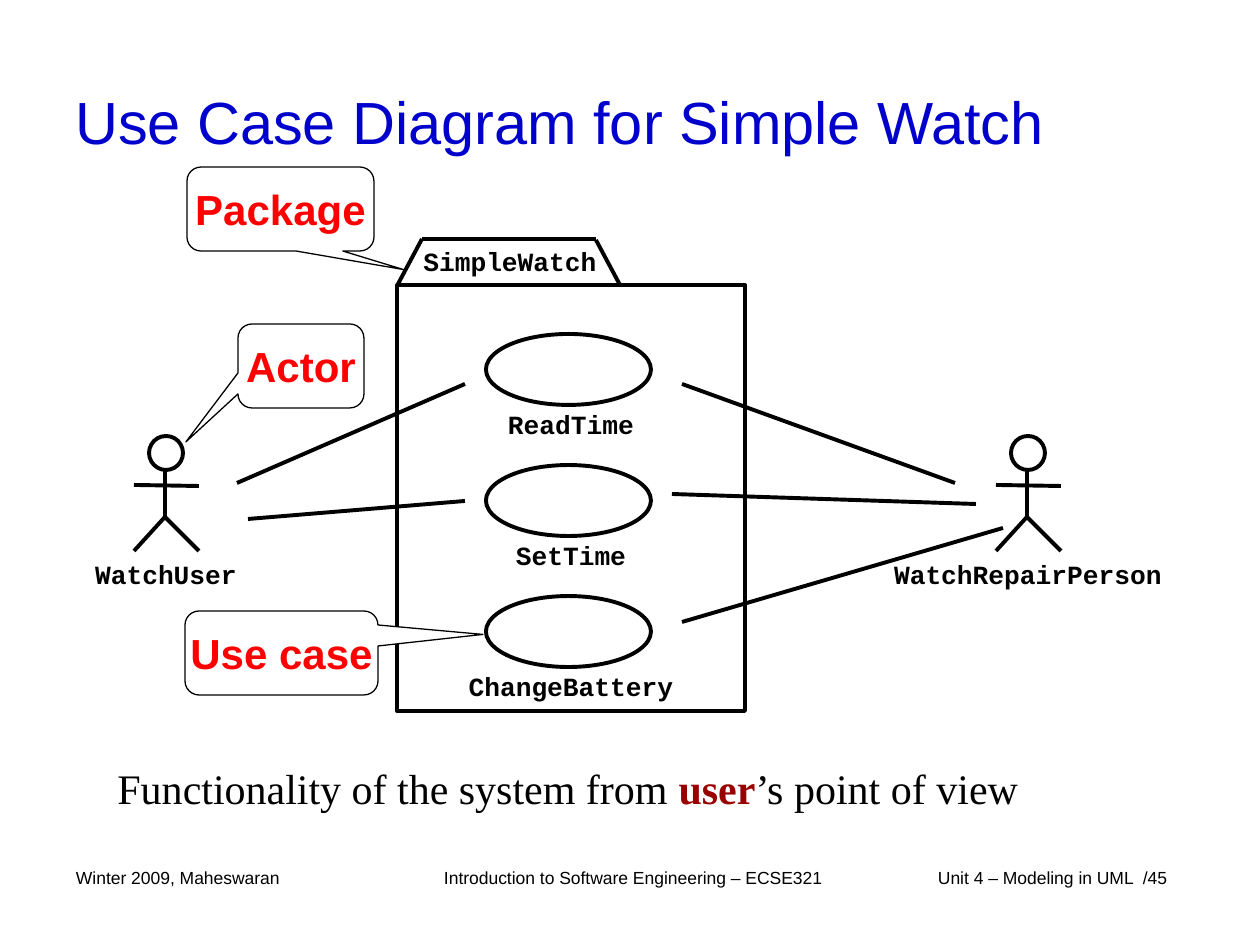
from lxml import etree
from pptx import Presentation
from pptx.dml.color import RGBColor
from pptx.enum import shapes, text
from pptx.oxml.ns import qn
from pptx.util import Emu, Pt

PX = 914400 / 126
ARIAL, MONO, SERIF = "Arial", "Courier New", "Times New Roman"
THEME = {
    "line": RGBColor(0, 0, 0),
    "paper": RGBColor(255, 255, 255),
    "thick": Pt(2.25),
    "thin": Pt(0.75),
    # style: font format and colour
    "title": ({"name": ARIAL, "size": Pt(34), "bold": False}, "0000CC"),
    "footer": ({"name": ARIAL, "size": Pt(10), "bold": False}, "000000"),
    "label": ({"name": MONO, "size": Pt(15), "bold": True}, "000000"),
    "callout": ({"name": ARIAL, "size": Pt(24), "bold": True}, "FF0000"),
    "body": ({"name": SERIF, "size": Pt(24), "bold": False}, "000000"),
    "strong": ({"name": SERIF, "size": Pt(24), "bold": True}, "990000"),
}
CHAR_W = 15.75  # width of one label character


def px(*values):
    return [Emu(round(v * PX)) for v in values]


def write(sp, *runs, **frame):
    tf = sp.text_frame
    for key, value in frame.items():
        setattr(tf, key, value)
    for words, style in runs:
        r = tf.paragraphs[0].add_run()
        r.text = words
        font, color = THEME[style]
        for key, value in font.items():
            setattr(r.font, key, value)
        r.font.color.rgb = RGBColor.from_string(color)


prs = Presentation()
prs.slide_width, prs.slide_height = px(1260, 945)
s = prs.slides.add_slide(prs.slide_layouts[6])
outlines, connectors, labels = [], [], []

# Footer and title
for words, x, w, inset in [
    ("Winter 2009, Maheswaran", 63, 294, 13),
    ("Introduction to Software Engineering – ECSE321", 431, 420, 13),
    ("Unit 4 – Modeling in UML  /45", 882, 315, 56),
]:
    sp = s.shapes.add_textbox(*px(x, 861, w, 63))
    write(sp, (words, "footer"), word_wrap=True, margin_left=px(inset)[0])

sp = s.shapes.add_textbox(*px(63, 42, 1134, 157))
write(sp, ("Use Case Diagram for Simple Watch", "title"), word_wrap=True,
      vertical_anchor=text.MSO_ANCHOR.MIDDLE)

# Actors: stick figures, each a group
for name, x in [("WatchUser", 165), ("WatchRepairPerson", 1027)]:
    actor = s.shapes.add_group_shape().shapes
    body = actor.build_freeform(x, 460, scale=PX)
    body.add_line_segments([(x, 517), (x - 31, 551)], close=False)
    sp = body.convert_to_shape()
    sp.fill.background()
    outlines.append(sp)
    for ends in [(x, 517, x + 34, 551), (x - 31, 485, x + 34, 486)]:
        connectors.append(actor.add_connector(shapes.MSO_CONNECTOR.STRAIGHT, *px(*ends)))
    head = actor.add_shape(shapes.MSO_SHAPE.OVAL, *px(x - 16, 436, 34, 34))
    head.fill.solid()
    head.fill.fore_color.rgb = THEME["paper"]
    outlines.append(head)
    labels.append((name, x + 1, 558))

# Package body and use cases
box = s.shapes.add_shape(shapes.MSO_SHAPE.RECTANGLE, *px(397, 285, 348, 426))
box.fill.background()
outlines.append(box)
for i, name in enumerate(["ReadTime", "SetTime", "ChangeBattery"]):
    y = 334 + 131 * i
    case = s.shapes.add_shape(shapes.MSO_SHAPE.OVAL, *px(486, y, 165, 71))
    case.fill.background()
    outlines.append(case)
    labels.append((name, 571, y + 74))

# Names below the actors and use cases
for name, center, y in labels:
    w = len(name) * CHAR_W
    sp = s.shapes.add_textbox(*px(center - w / 2, y, w, 31))
    write(sp, (name, "label"), word_wrap=False, margin_left=0, margin_right=0,
          margin_top=0, margin_bottom=0)

# Associations and package tab
for ends in [
    (237, 483, 465, 384), (248, 519, 465, 501),
    (682, 622, 1003, 528), (682, 384, 955, 483), (672, 494, 976, 504),
    (398, 284, 422, 239), (422, 239, 596, 239), (620, 285, 596, 240),
]:
    connectors.append(s.shapes.add_connector(shapes.MSO_CONNECTOR.STRAIGHT, *px(*ends)))

# Callouts
for words, x, y, w, tip in [
    ("Actor", 238, 324, 126, (-0.913, 0.904)),
    ("Use case", 185, 611, 193, (1.044, -0.221)),
    ("Package", 187, 167, 187, (0.658, 0.721)),
]:
    sp = s.shapes.add_shape(shapes.MSO_SHAPE.ROUNDED_RECTANGULAR_CALLOUT, *px(x, y, w, 84))
    sp.adjustments[0], sp.adjustments[1] = tip
    sp.shadow.inherit = False
    sp.fill.solid()
    sp.fill.fore_color.rgb = THEME["paper"]
    sp.line.color.rgb = THEME["line"]
    sp.line.width = THEME["thin"]
    write(sp, (words, "callout"), word_wrap=False,
          vertical_anchor=text.MSO_ANCHOR.MIDDLE)
    sp.text_frame.paragraphs[0].alignment = text.PP_ALIGN.CENTER

# Package name and summary
sp = s.shapes.add_textbox(*px(411, 239, 199, 44))
write(sp, ("SimpleWatch", "label"), word_wrap=False)
sp = s.shapes.add_textbox(*px(105, 756, 1017, 63))
write(sp, ("Functionality of the system from ", "body"), ("user", "strong"),
      ("’s point of view", "body"), word_wrap=True)

# Line format shared by the diagram
for sp in outlines:
    sp.shadow.inherit = False
for c in connectors:
    etree.SubElement(c.line._get_or_add_ln().getparent(), qn("a:effectLst"))
for sp in outlines + connectors:
    sp.line.color.rgb = THEME["line"]
    sp.line.width = THEME["thick"]

prs.save("out.pptx")
